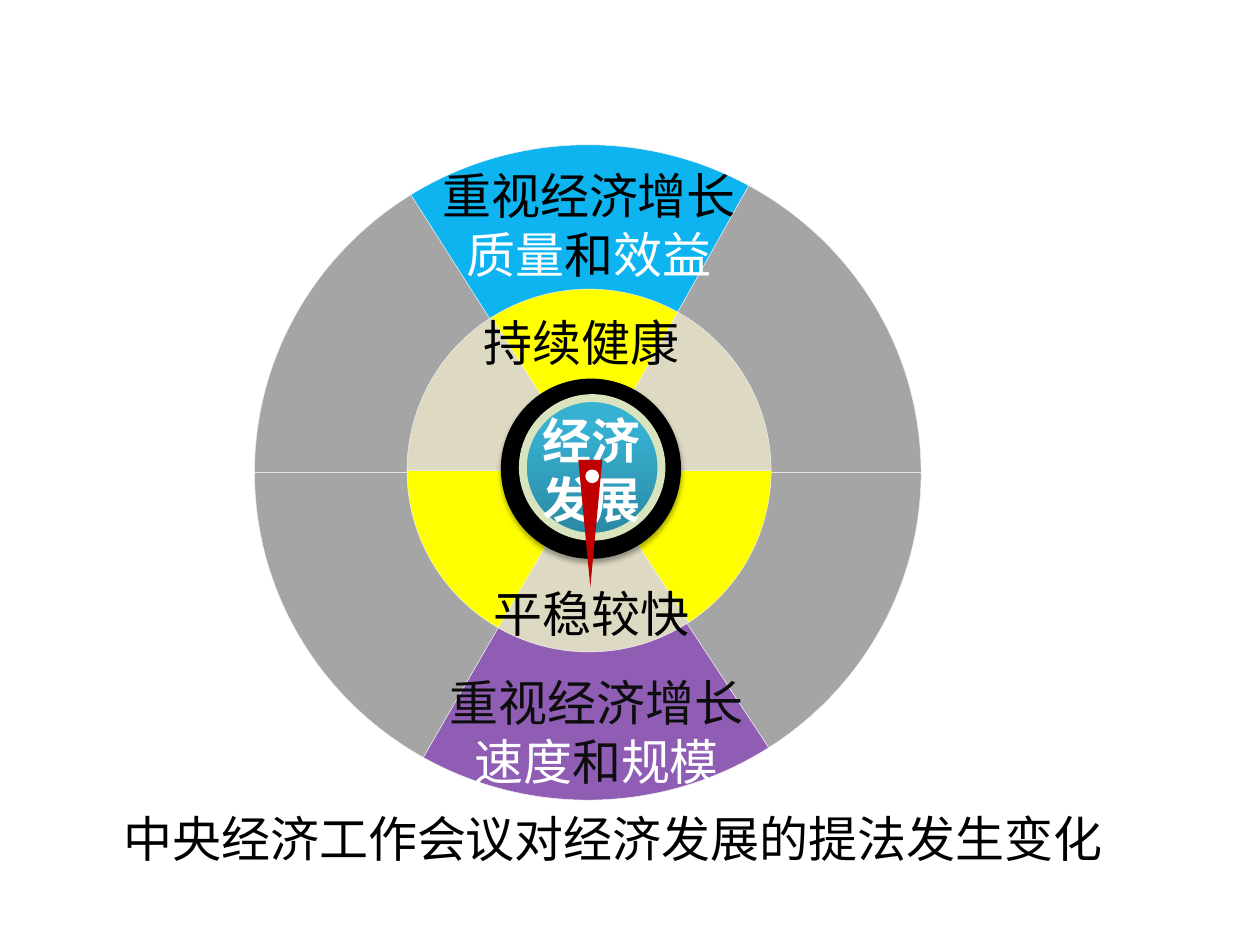
from dataclasses import dataclass
from itertools import pairwise

from lxml.etree import SubElement
from pptx import Presentation
from pptx.dml.color import RGBColor
from pptx.enum.shapes import MSO_SHAPE as Kind
from pptx.enum.text import MSO_ANCHOR as Anchor, MSO_AUTO_SIZE as AutoSize, PP_ALIGN as Align
from pptx.oxml.ns import qn
from pptx.util import Inches, Pt

COLUMNS, ROWS = 100, 75
LATIN, CHINESE = "Calibri", "Noto Sans CJK SC"
WHITE, BLACK, INK = "FFFFFF", "000000", "0D0D0D"
GREY, BLUE, PURPLE = "7F7F7F", "00B0F0", "7030A0"
YELLOW, BEIGE, EDGE = "FFFF00", "DDD9C3", "F2F2F2"
BOUNDARIES = (0, 56.7, 120, 180, 237.5, 299.3, 360)


@dataclass
class Area:
    left: float
    top: float
    width: float
    height: float


@dataclass
class Ring:
    area: Area
    fills: tuple[tuple[str, int], ...]


@dataclass
class Label:
    area: Area
    runs: tuple[tuple[str, str], ...]
    align: Align = Align.LEFT
    latin: str = LATIN
    bold: bool = False


RINGS = (
    Ring(Area(20.2, 11.5, 52.9, 52),
         ((GREY, 70), (PURPLE, 78), (GREY, 70), (GREY, 70), (BLUE, 95), (GREY, 70))),
    Ring(Area(32.3, 22.95, 28.9, 28.8),
         tuple((fill, 100) for fill in (YELLOW, BEIGE) * 3)),
)
CAPTION = Label(Area(8.8, 63.7, 80.6, 5.7), (("中央经济工作会议对经济发展的提法发生变化", BLACK),))
HUB_LABEL = Label(Area(42.1, 32.1, 11.8, 10.4), (("经济发展", WHITE),), latin=CHINESE, bold=True)
SECTOR_LABELS = (
    Label(Area(34.3, 52.9, 26.1, 10.4),
          (("重视经济增长", INK), ("速度", WHITE), ("和", INK), ("规模", WHITE)), Align.CENTER),
    Label(Area(33.3, 12.7, 26.9, 10.4),
          (("重视经济增长", BLACK), ("质量", WHITE), ("和", BLACK), ("效益", WHITE)), Align.CENTER),
    Label(Area(37.4, 24.3, 19.7, 5.7), (("持续健康", BLACK),)),
)
LOWER_LABEL = Label(Area(38.2, 45.8, 18.1, 5.7), (("平稳较快", BLACK),))

deck = Presentation()
deck.slide_width, deck.slide_height = Inches(10), Inches(7.5)
slide = deck.slides.add_slide(deck.slide_layouts[5])


def colour(value: str) -> RGBColor:
    return RGBColor.from_string(value)


def place(area: Area) -> tuple[int, int, int, int]:
    column, row = deck.slide_width / COLUMNS, deck.slide_height / ROWS
    return (round(area.left * column), round(area.top * row),
            round(area.width * column), round(area.height * row))


def draw(kind: Kind, area: Area, fill: str, edge: str = "", weight: float = 0, opacity: int = 100):
    shape = slide.shapes.add_shape(kind, *place(area))
    shape.shadow.inherit = False
    shape.fill.solid()
    shape.fill.fore_color.rgb = colour(fill)
    if opacity < 100:
        paint = shape.fill._xPr.find(qn("a:solidFill"))[0]
        SubElement(paint, qn("a:alpha"), val=str(opacity * 1000))
    if edge:
        shape.line.color.rgb = colour(edge)
        shape.line.width = Pt(weight)
    else:
        shape.line.fill.background()
    return shape


def draw_ring(ring: Ring) -> None:
    for (start, end), (fill, opacity) in zip(pairwise(BOUNDARIES), ring.fills):
        sector = draw(Kind.PIE, ring.area, fill, EDGE, 0.25, opacity)
        sector.adjustments[0] = start * 0.6
        sector.adjustments[1] = end % 360 * 0.6


def cast_shadow(shape) -> None:
    effects = shape._element.spPr.find(qn("a:effectLst"))
    shadow = SubElement(effects, qn("a:outerShdw"), blurRad=str(Pt(3.1)), dist=str(Pt(1.8)),
                        dir="5400000", rotWithShape="0")
    paint = SubElement(shadow, qn("a:srgbClr"), val=BLACK)
    SubElement(paint, qn("a:alpha"), val="35000")


def write(holder, label: Label) -> None:
    holder.left, holder.top, holder.width, holder.height = place(label.area)
    frame = holder.text_frame
    frame.word_wrap = True
    frame.auto_size = AutoSize.NONE
    frame.vertical_anchor = Anchor.TOP
    paragraph = frame.paragraphs[0]
    paragraph.alignment = label.align
    paragraph.line_spacing = Pt(33.5)
    for words, ink in label.runs:
        run = paragraph.add_run()
        run.text = words
        run.font.size = Pt(28)
        run.font.bold = label.bold
        run.font.name = label.latin
        run.font.color.rgb = colour(ink)
        latin = run.font._element.find(qn("a:latin"))
        east_asian = SubElement(run.font._element, qn("a:ea"), typeface=CHINESE)
        latin.addnext(east_asian)


def add_label(label: Label) -> None:
    write(slide.shapes.add_textbox(*place(label.area)), label)


def draw_hub() -> None:
    rim = draw(Kind.OVAL, Area(39.8, 30.1, 14.2, 14.2), BLACK, BLACK, 0.75)
    dial = draw(Kind.OVAL, Area(41.5, 31.6, 11, 11), "37B1D2", "D7E4BD", 4.5)
    dial.fill.gradient()
    dial.fill.gradient_angle = 90
    for stop, position, shade in zip(dial.fill.gradient_stops, (0, 0.8), ("2A88A2", "37B1D2")):
        stop.position = position
        stop.color.rgb = colour(shade)
    for disc in (rim, dial):
        cast_shadow(disc)


def draw_needle() -> None:
    needle = draw(Kind.ISOSCELES_TRIANGLE, Area(45.9, 36.5, 1.9, 10.1), "C00000")
    needle.rotation = 180
    draw(Kind.OVAL, Area(46.6, 37.4, 0.8, 0.8), WHITE, WHITE, 2)


def main() -> None:
    write(slide.shapes.title, CAPTION)
    for ring in RINGS:
        draw_ring(ring)
    draw_hub()
    add_label(HUB_LABEL)
    for label in SECTOR_LABELS:
        add_label(label)
    draw_needle()
    add_label(LOWER_LABEL)
    deck.save("out.pptx")


if __name__ == "__main__":
    main()
